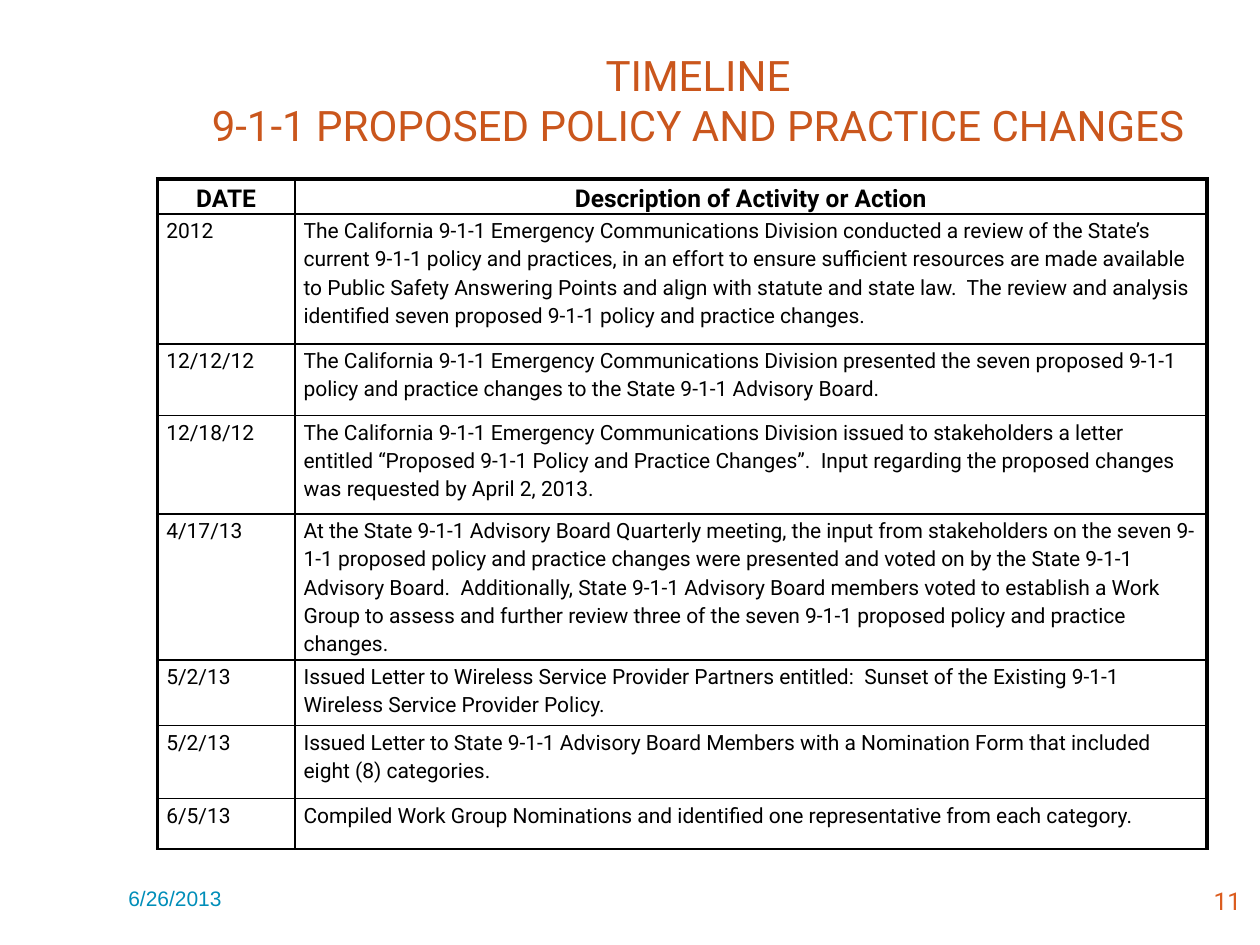
from typing import NamedTuple

from lxml.etree import SubElement
from pptx import Presentation
from pptx.dml.color import RGBColor
from pptx.enum.text import MSO_ANCHOR as Anchor, PP_ALIGN as Align
from pptx.oxml.ns import qn
from pptx.util import Inches, Pt

COLORS = {"title": "CA561C", "date": "008EB9", "number": "DB5C1E",
          "ink": "000000", "paper": "FFFFFF"}
WIDTH, HEIGHT = 10, 7.5
TABLE_LEFT, TABLE_TOP = 1.25, 1.42
COLUMN_WIDTHS = (1.09, 7.24)
OUTER, INNER = 2.25, 1


class Label(NamedTuple):
    text: str
    left: float
    top: float
    width: float
    height: float
    size: int
    color: str
    font: str = "Roboto"
    align: Align = Align.LEFT
    anchor: Anchor = Anchor.TOP


class Entry(NamedTuple):
    date: str
    activity: str
    height: float


LABELS = (
    Label("TIMELINE\v9-1-1 PROPOSED POLICY AND PRACTICE CHANGES",
          1.25, 0.33, 8.58, 0.92, 24, "title", align=Align.CENTER, anchor=Anchor.MIDDLE),
    Label("6/26/2013", 0.92, 6.98, 2.33, 0.52, 12, "date", font="Arial"),
    Label("11", 7.5, 6.98, 2.45, 0.52, 14, "number", align=Align.RIGHT),
)

ENTRIES = (
    Entry("DATE", "Description of Activity or Action", 0.28),
    Entry("2012", "The California 9-1-1 Emergency Communications Division conducted a review "
          "of the State’s current 9-1-1 policy and practices, in an effort to ensure sufficient "
          "resources are made available to Public Safety Answering Points and align with statute "
          "and state law.  The review and analysis identified seven proposed 9-1-1 policy and "
          "practice changes.", 1.03),
    Entry("12/12/12", "The California 9-1-1 Emergency Communications Division presented the "
          "seven proposed 9-1-1 policy and practice changes to the State 9-1-1 Advisory Board.",
          0.57),
    Entry("12/18/12", "The California 9-1-1 Emergency Communications Division issued to "
          "stakeholders a letter entitled “Proposed 9-1-1 Policy and Practice Changes”.  Input "
          "regarding the proposed changes was requested by April 2, 2013.", 0.78),
    Entry("4/17/13", "At the State 9-1-1 Advisory Board Quarterly meeting, the input from "
          "stakeholders on the seven 9-1-1 proposed policy and practice changes were presented "
          "and voted on by the State 9-1-1 Advisory Board.  Additionally, State 9-1-1 Advisory "
          "Board members voted to establish a Work Group to assess and further review three of "
          "the seven 9-1-1 proposed policy and practice changes.", 1.01),
    Entry("5/2/13", "Issued Letter to Wireless Service Provider Partners entitled:  Sunset of "
          "the Existing 9-1-1 Wireless Service Provider Policy.", 0.52),
    Entry("5/2/13", "Issued Letter to State 9-1-1 Advisory Board Members with a Nomination Form "
          "that included eight (8) categories.", 0.58),
    Entry("6/5/13", "Compiled Work Group Nominations and identified one representative from "
          "each category.", 0.4),
)


def style(paragraph, size: int, color: str, font: str = "Roboto", bold: bool = False) -> None:
    paragraph.font.size = Pt(size)
    paragraph.font.name = font
    paragraph.font.bold = bold
    paragraph.font.color.rgb = RGBColor.from_string(COLORS[color])


def add_label(slide, label: Label) -> None:
    box = slide.shapes.add_textbox(*map(Inches, label[1:5]))
    frame = box.text_frame
    frame.word_wrap = True
    frame.vertical_anchor = label.anchor
    frame.text = label.text
    paragraph = frame.paragraphs[0]
    paragraph.alignment = label.align
    style(paragraph, label.size, label.color, label.font)


def set_borders(cell, widths: dict[str, float]) -> None:
    """Put the border lines ahead of the fill, as the schema orders them."""
    properties = cell._tc.get_or_add_tcPr()
    for position, (side, width) in enumerate(widths.items()):
        line = SubElement(properties, qn(f"a:{side}"), w=str(Pt(width)))
        fill = SubElement(line, qn("a:solidFill"))
        SubElement(fill, qn("a:srgbClr"), val=COLORS["ink"])
        properties.insert(position, line)


def fill_cell(cell, text: str, header: bool, first_column: bool) -> None:
    cell.fill.solid()
    cell.fill.fore_color.rgb = RGBColor.from_string(COLORS["paper"])
    cell.margin_left = cell.margin_right = Inches(0.07)
    cell.margin_top, cell.margin_bottom = Inches(0.01), 0
    cell.text = text
    paragraph = cell.text_frame.paragraphs[0]
    paragraph.alignment = Align.CENTER if header else Align.LEFT
    paragraph.line_spacing = 1.15
    style(paragraph, 14 if header else 12, "ink", bold=header)
    set_borders(cell, {"lnL": OUTER if first_column else INNER,
                       "lnR": INNER if first_column else OUTER,
                       "lnT": OUTER if header else INNER,
                       "lnB": INNER})


def add_timeline(slide) -> None:
    size = sum(COLUMN_WIDTHS), sum(entry.height for entry in ENTRIES)
    table = slide.shapes.add_table(len(ENTRIES), len(COLUMN_WIDTHS),
                                   *map(Inches, (TABLE_LEFT, TABLE_TOP, *size))).table
    table.horz_banding = False
    for column, width in zip(table.columns, COLUMN_WIDTHS):
        column.width = Inches(width)
    for row, entry in enumerate(ENTRIES):
        table.rows[row].height = Inches(entry.height)
        for column, text in enumerate((entry.date, entry.activity)):
            fill_cell(table.cell(row, column), text, row == 0, column == 0)


def main() -> None:
    deck = Presentation()
    deck.slide_width, deck.slide_height = Inches(WIDTH), Inches(HEIGHT)
    slide = deck.slides.add_slide(deck.slide_layouts[6])
    for label in LABELS:
        add_label(slide, label)
    add_timeline(slide)
    deck.save("out.pptx")


if __name__ == "__main__":
    main()
